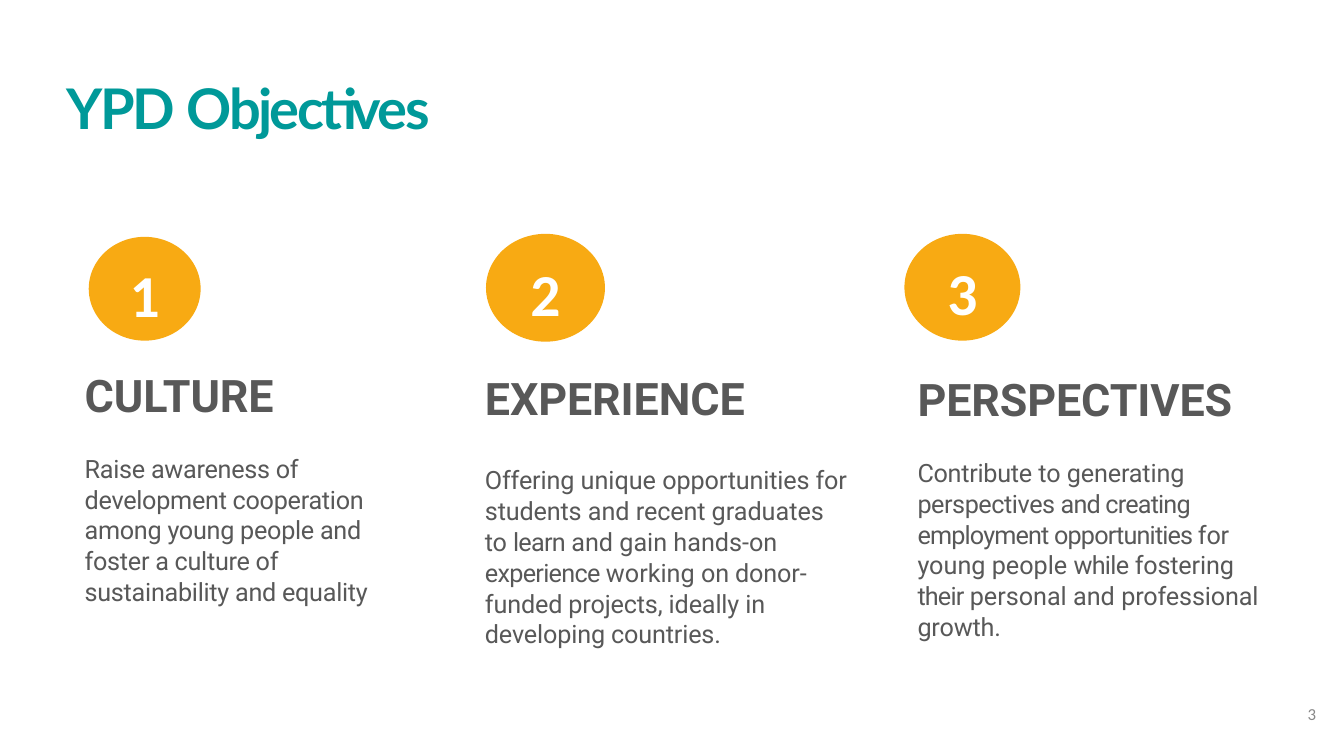
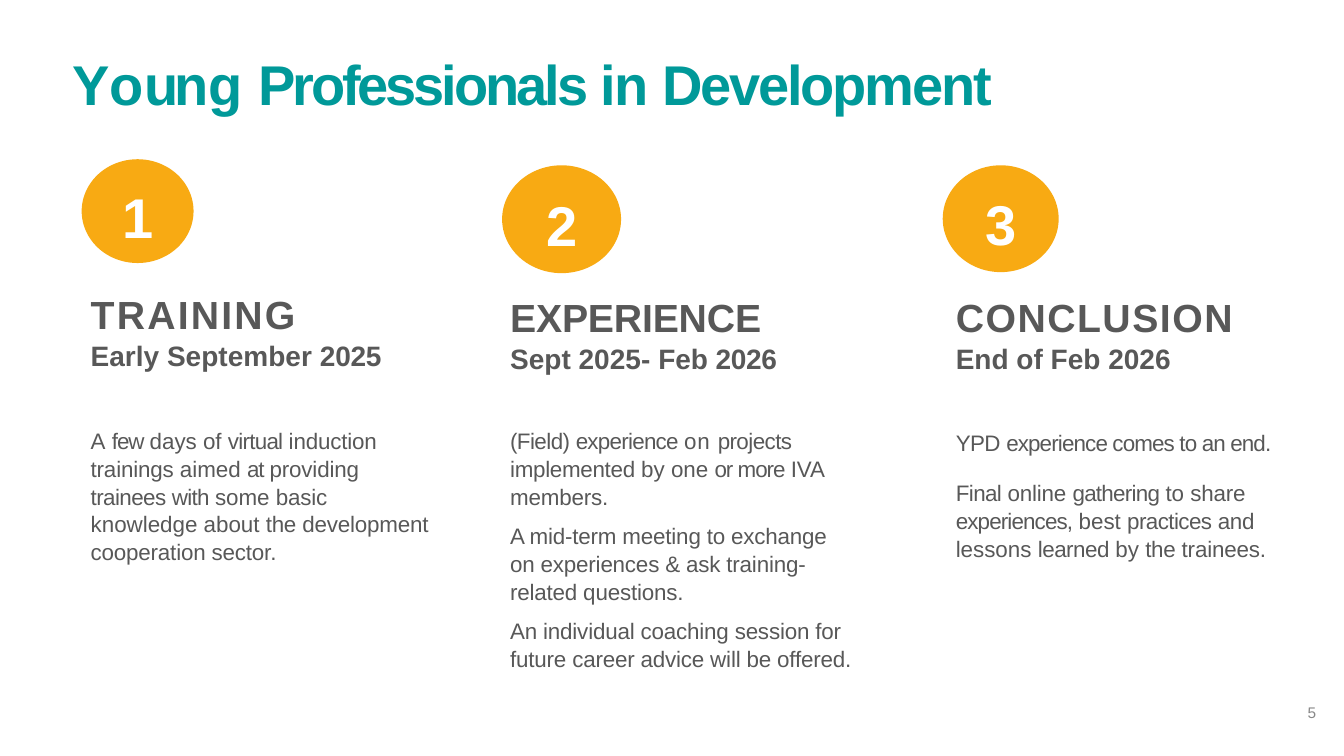
from pptx import Presentation
from pptx.dml.color import RGBColor
from pptx.enum.shapes import MSO_SHAPE
from pptx.enum.text import MSO_ANCHOR, MSO_AUTO_SIZE, PP_ALIGN
from pptx.util import Inches, Pt

OVAL = MSO_SHAPE.OVAL
TOP, MIDDLE = MSO_ANCHOR.TOP, MSO_ANCHOR.MIDDLE
LEFT, CENTER = PP_ALIGN.LEFT, PP_ALIGN.CENTER
NO_AUTOFIT = MSO_AUTO_SIZE.NONE
TEAL, ORANGE, WHITE = "009999", "F8AA13", "FFFFFF"
DARK_GRAY, PAGE_GRAY = "585858", "888888"
BADGE_SIZES = [(1.11, 1.03), (1.18, 1.07), (1.15, 1.06)]

objectives = {
    "title": [("YPD ", -1.6), ("Objectives", -1.8)],
    "title_at": (0.61, 0.71), "title_font": "Lato",
    "page": "3", "page_font": "Calibri", "page_size": 12,
    "badge_font": "Calibri", "badge_size": 42.5,
    "text_font": "Roboto", "heading_size": 32, "body_size": 18, "line_spacing": 1.02,
    "columns": [
        {"badge_at": (0.88, 2.35), "text_at": (0.83, 3.65), "width": 3.42,
         "heading": [("CULTURE", -0.1)], "body_gaps": [22],
         "body": [[("Raise awareness of development cooperation among young people "
                    "and foster a culture of sustainability and equality", -0.2)]]},
        {"badge_at": (4.82, 2.32), "text_at": (4.8, 3.68), "width": 3.61,
         "heading": [("EXPERIENCE", -0.1)], "body_gaps": [28],
         "body": [[("Offering ", -0.1), ("unique ", 0), ("opportunities for students ", -0.1),
                   ("and ", 0), ("recent ", -0.1), ("graduates ", 0), ("to ", -0.2),
                   ("learn ", -0.5), ("and gain hands-on ", 0), ("experience ", -0.5),
                   ("working ", 0),
                   ("on donor-funded projects, ideally in developing countries.", -0.1)]]},
        {"badge_at": (8.97, 2.32), "text_at": (9.09, 3.69), "width": 3.45,
         "heading": [("PERSPECTIVES", -0.1)], "body_gaps": [22],
         "body": [[("Contribute ", -0.2), ("to ", 0), ("generating ", -0.1),
                   ("perspectives", -0.3), (" and creating employment opportunities f", -0.6),
                   ("or ", -0.2), ("young people ", 0), ("while ", -0.5),
                   ("fostering ", -0.1), ("their ", -0.6), ("personal and ", 0),
                   ("professional growth.", -0.1)]]},
    ],
}

programme = {
    "title": [("Y", -7.2), ("o", -2.4), ("un", -2.5), ("g ", -0.2),
              ("Professionals ", -2.2), ("in ", -1.2), ("Development", -1.6)],
    "title_at": (0.67, 0.47), "title_font": "Arial",
    "page": "5", "page_font": "Arial", "page_size": 11,
    "badge_font": "Arial", "badge_size": 40,
    "text_font": "Arial", "heading_size": 28, "body_size": 16, "line_spacing": 1.04,
    "columns": [
        {"badge_at": (0.81, 1.58), "text_at": (0.89, 2.88), "width": 3.37,
         "heading": [("TRAINING", 1.6)],
         "date": [("Early September ", 0), ("2025", -0.2)], "body_gaps": [38.5],
         "body": [[("A", 0.9), (" few ", -0.8), ("days of ", 0), ("virtual ", -0.5),
                   ("induction trainings ", -0.1), ("aimed ", 0), ("at ", -0.8),
                   ("providing ", -0.1), ("trainees ", -0.4), ("with ", -0.5), ("some ", 0),
                   ("basic ", -0.1), ("knowledge about ", 0), ("the ", -0.2),
                   ("development cooperation sector.", -0.1)]]},
        {"badge_at": (4.98, 1.64), "text_at": (5.05, 2.91), "width": 3.44,
         "heading": [("EXPERIENCE", -0.1)],
         "date": [("Sept 2025- ", 0), ("Feb ", -0.1), ("2026", -0.2)], "body_gaps": [36.5, 8, 8],
         "body": [[("(Field) ", -0.4), ("experience ", -0.5), ("on ", 0.6),
                   ("projects ", -0.4), ("implemented ", -0.2), ("by one ", 0),
                   ("or more ", -0.7), ("IVA ", 0), ("members.", -0.1)],
                  [("A mid-term meeting to exchange on experiences & ask "
                    "training-related questions.", -0.1)],
                  [("An individual coaching session for future career advice "
                    "will be offered.", -0.1)]]},
        {"badge_at": (9.35, 1.64), "text_at": (9.47, 2.91), "width": 3.44,
         "heading": [("CONCLUSION", 1.1)],
         "date": [("End of Feb 2026", 0)], "body_gaps": [38, 16],
         "body": [[("YPD ", -0.4), ("experience comes to an end.", -0.6)],
                  [("Final ", -0.4), ("online ", -0.1), ("gathering ", -0.5), ("to ", 0),
                   ("share ", -0.1), ("experiences, ", -0.6), ("best ", 0),
                   ("practices ", -0.4), ("and ", -0.2), ("lessons ", 0),
                   ("learned ", -0.3), ("by ", 0), ("the ", -0.2), ("trainees.", -0.1)]]},
    ],
}


def set_frame(frame, left=0.01, top=0.01, anchor=TOP):
    frame.auto_size = NO_AUTOFIT
    frame.word_wrap = True
    frame.vertical_anchor = anchor
    frame.margin_left, frame.margin_top = Inches(left), Inches(top)
    frame.margin_right = frame.margin_bottom = 0


def add_runs(paragraph, runs, font, size, color, bold=False, align=LEFT):
    paragraph.alignment = align
    for text, tracking in runs:
        run = paragraph.add_run()
        run.text = text
        run.font.name = font
        run.font.size = Pt(size)
        run.font.bold = bold
        run.font.color.rgb = RGBColor.from_string(color)
        run.font._element.set("spc", str(round(tracking * 100)))


prs = Presentation()
prs.slide_width, prs.slide_height = Inches(13.33), Inches(7.5)

for content in (objectives, programme):
    slide = prs.slides.add_slide(prs.slide_layouts[5])
    title = slide.shapes.title
    title.left, title.top = [Inches(v) for v in content["title_at"]]
    title.width, title.height = Inches(11.82), Inches(0.69)
    set_frame(title.text_frame, left=0.05, top=0.02)
    add_runs(title.text_frame.paragraphs[0], content["title"],
             content["title_font"], 40, TEAL, True)

    font = content["text_font"]
    for number, (column, size) in enumerate(zip(content["columns"], BADGE_SIZES), 1):
        badge = slide.shapes.add_shape(
            OVAL, *[Inches(v) for v in column["badge_at"] + size])
        badge.shadow.inherit = False
        badge.fill.solid()
        badge.fill.fore_color.rgb = RGBColor.from_string(ORANGE)
        badge.line.fill.background()
        set_frame(badge.text_frame, left=0, top=0.09, anchor=MIDDLE)
        add_runs(badge.text_frame.paragraphs[0], [(str(number), -0.5)],
                 content["badge_font"], content["badge_size"], WHITE, True, CENTER)

        left, top = column["text_at"]
        frame = slide.shapes.add_textbox(
            Inches(left), Inches(top), Inches(column["width"]), Inches(6.6 - top)).text_frame
        set_frame(frame, top=0)
        add_runs(frame.paragraphs[0], column["heading"],
                 font, content["heading_size"], DARK_GRAY, True)
        if "date" in column:
            date = frame.add_paragraph()
            date.space_before = Pt(0.6)
            add_runs(date, column["date"], font, 20, DARK_GRAY, True)
        for gap, runs in zip(column["body_gaps"], column["body"]):
            body = frame.add_paragraph()
            body.space_before = Pt(gap)
            body.line_spacing = content["line_spacing"]
            add_runs(body, runs, font, content["body_size"], DARK_GRAY)

    page = slide.shapes.add_textbox(
        Inches(12.96), Inches(6.97), Inches(0.11), Inches(0.23)).text_frame
    set_frame(page)
    add_runs(page.paragraphs[0], [(content["page"], -0.5)],
             content["page_font"], content["page_size"], PAGE_GRAY)

prs.save("out.pptx")
